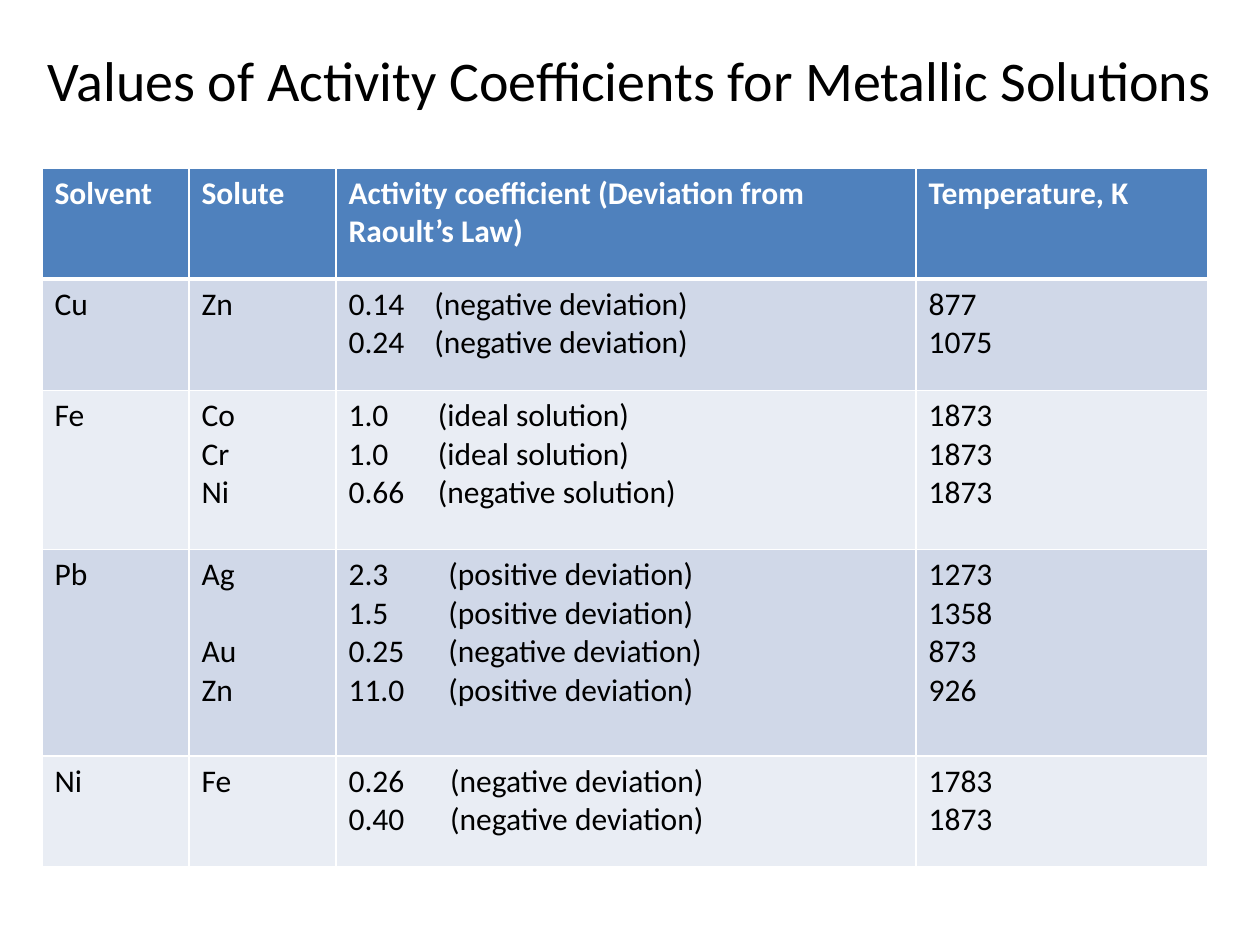
from lxml import etree
from pptx import Presentation
from pptx.dml.color import RGBColor
from pptx.enum.text import MSO_ANCHOR, PP_ALIGN
from pptx.oxml.ns import qn
from pptx.util import Pt

MIDDLE = MSO_ANCHOR.MIDDLE
CENTER = PP_ALIGN.CENTER

FONT = "Calibri"
COLORS = {
    "text": "000000",
    "line": "FFFFFF",
    "head": "4F81BD",
    "dark": "D0D8E8",
    "light": "E9EDF4",
}
WIDTHS = [84, 84, 331.5, 166.5]
HEAD = ["Solvent", "Solute",
        "Activity coefficient (Deviation from Raoult’s Law)", "Temperature, K"]
HEAD_HIGH = 63.5
# Row height, tab stop in the coefficient column, texts of the four cells
BODY = [
    (63.5, 49, ["Cu", "Zn",
                "0.14\t(negative deviation)\n0.24\t(negative deviation)",
                "877\n1075"]),
    (91, 51, ["Fe", "Co\nCr\nNi",
              "1.0\t(ideal solution)\n1.0\t(ideal solution)\n"
              "0.66\t(negative solution)",
              "1873\n1873\n1873"]),
    (118, 57, ["Pb", "Ag\nAu\nZn",
               "2.3\t(positive deviation)\n1.5\t(positive deviation)\n"
               "0.25\t(negative deviation)\n11.0\t(positive deviation)",
               "1273\n1358\n873\n926"]),
    (63.5, 58, ["Ni", "Fe",
                "0.26\t(negative deviation)\n0.40\t(negative deviation)",
                "1783\n1873"]),
]
LINE_HIGH = 22


def color(name):
    return RGBColor.from_string(COLORS[name])


def set_font(para, size, tone, bold=False):
    font = para.font
    font.name, font.size, font.bold = FONT, Pt(size), bold
    font.color.rgb = color(tone)


def set_tab(para, pos):
    tabs = etree.SubElement(para._p.get_or_add_pPr(), qn("a:tabLst"))
    etree.SubElement(tabs, qn("a:tab"), pos=str(Pt(pos)), algn="l")


def set_lines(cell, top, bottom):
    """Draw the four cell borders; top and bottom are widths in points."""
    props = cell._tc.get_or_add_tcPr()
    for side, width in (("L", 1), ("R", 1), ("T", top), ("B", bottom)):
        line = etree.SubElement(props, qn(f"a:ln{side}"), w=str(Pt(width)))
        fill = etree.SubElement(line, qn("a:solidFill"))
        etree.SubElement(fill, qn("a:srgbClr"), val=COLORS["line"])


def fill_cell(cell, text, tone, ink, bold=False, top=1, bottom=1):
    set_lines(cell, top, bottom)
    cell.fill.solid()
    cell.fill.fore_color.rgb = color(tone)
    cell.text = text
    for para in cell.text_frame.paragraphs:
        # Tab stops must follow spacing but precede the font in the XML
        if para.text == "Ag":
            para.space_after = Pt(LINE_HIGH)
        set_font(para, 18, ink, bold)


def add_title(slide, text):
    box = slide.shapes.add_textbox(Pt(18), Pt(0), Pt(684), Pt(90))
    frame = box.text_frame
    frame.word_wrap = True
    frame.vertical_anchor = MIDDLE
    para = frame.paragraphs[0]
    para.text = text
    para.alignment = CENTER
    set_font(para, 32, "text")


def add_grid(slide):
    high = HEAD_HIGH + sum(row[0] for row in BODY)
    grid = slide.shapes.add_table(len(BODY) + 1, len(WIDTHS), Pt(24), Pt(96),
                                  Pt(sum(WIDTHS)), Pt(high)).table
    for col, width in zip(grid.columns, WIDTHS):
        col.width = Pt(width)
    grid.rows[0].height = Pt(HEAD_HIGH)
    for col, text in enumerate(HEAD):
        fill_cell(grid.cell(0, col), text, "head", "line", bold=True, bottom=3)
    for row, (high, stop, texts) in enumerate(BODY, 1):
        grid.rows[row].height = Pt(high)
        tone = "dark" if row % 2 else "light"
        for col, text in enumerate(texts):
            cell = grid.cell(row, col)
            for para in cell.text_frame.paragraphs:
                para.text = ""
            fill_cell(cell, text, tone, "text", top=3 if row == 1 else 1)
            if "\t" in text:
                for para in cell.text_frame.paragraphs:
                    set_tab(para, stop)
                    props = para._p.pPr
                    props.append(props.find(qn("a:defRPr")))


def main():
    deck = Presentation()
    deck.slide_width, deck.slide_height = Pt(720), Pt(540)
    slide = deck.slides.add_slide(deck.slide_layouts[6])
    add_title(slide, "Values of Activity Coefficients for Metallic Solutions")
    add_grid(slide)
    deck.save("out.pptx")


if __name__ == "__main__":
    main()
